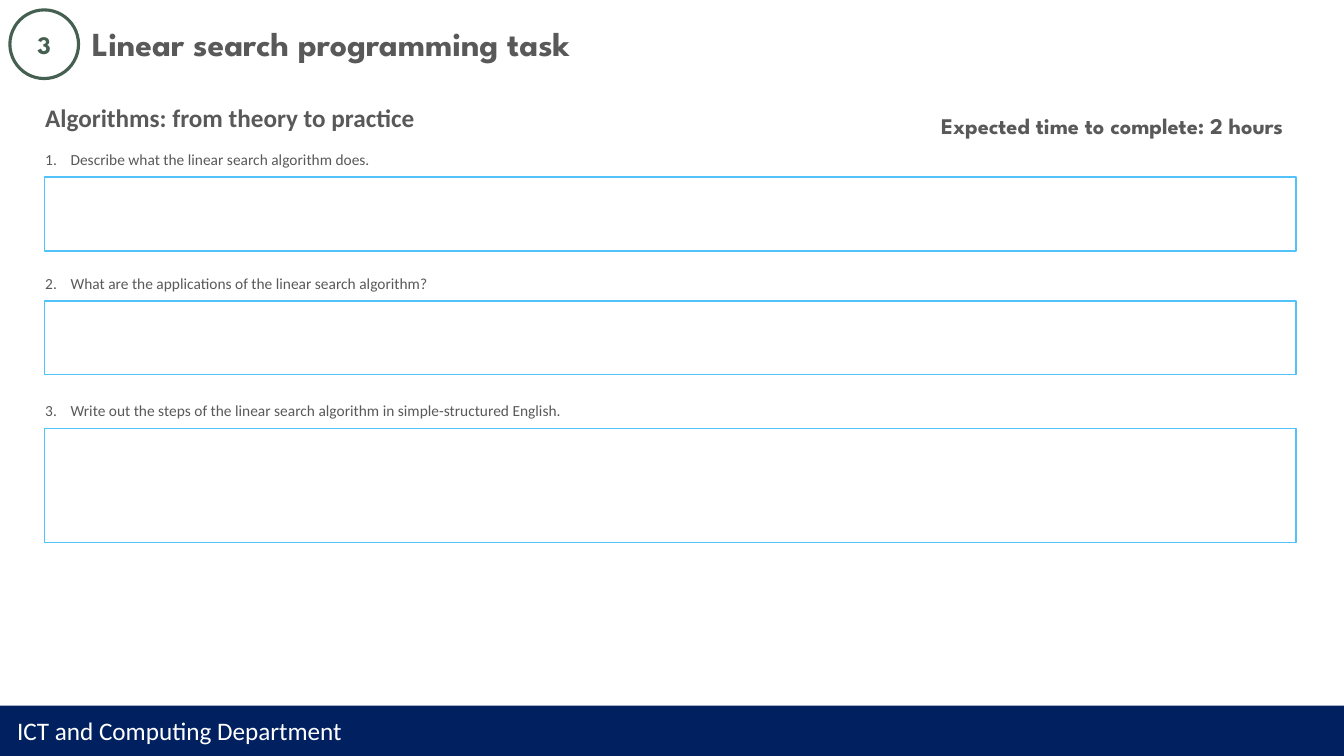
from pptx import Presentation
from pptx.dml.color import RGBColor
from pptx.enum.shapes import MSO_SHAPE
from pptx.enum.text import MSO_ANCHOR, MSO_AUTO_SIZE, PP_ALIGN
from pptx.util import Cm, Pt
from lxml.etree import SubElement
from pptx.oxml.ns import qn

GREY = RGBColor(0x59, 0x59, 0x59)
GREEN = RGBColor(0x45, 0x5F, 0x51)
NAVY = RGBColor(0x00, 0x20, 0x60)
SKY = RGBColor(0x51, 0xC3, 0xF9)
WHITE = RGBColor(0xFF, 0xFF, 0xFF)
WIDE, HIGH = 33.87, 19.05
EDGE = 1.12
INDENT = Cm(0.64)
HEAD = "League Spartan"
BODY = "Calibri"


class Sheet:
    def __init__(self, deck):
        self.slide = deck.slides.add_slide(deck.slide_layouts[5])
        self.style = {"name": BODY, "size": 18, "bold": False, "color": GREY}

    def place(self, item, area):
        for key, value in zip(("left", "top", "width", "height"), area):
            setattr(item, key, Cm(value))

    def letter(self, item, text, look, anchor=MSO_ANCHOR.TOP, wrap=True,
               align=PP_ALIGN.LEFT, space=1.0, fit=MSO_AUTO_SIZE.NONE):
        frame = item.text_frame
        layout = {"auto_size": fit, "word_wrap": wrap, "vertical_anchor": anchor}
        for key, value in layout.items():
            setattr(frame, key, value)
        para = frame.paragraphs[0]
        for key, value in {"alignment": align, "line_spacing": space}.items():
            setattr(para, key, value)
        run = para.add_run()
        run.text = text
        style = {**self.style, **look}
        run.font.color.rgb = style.pop("color")
        style["size"] = Pt(style["size"])
        for key, value in style.items():
            setattr(run.font, key, value)
        return para

    def title(self, text, area, look, **form):
        item = self.slide.shapes.title
        self.place(item, area)
        self.letter(item, text, look, **form)

    def label(self, text, area, look, **form):
        item = self.slide.shapes.add_textbox(*map(Cm, area))
        return self.letter(item, text, look, **form)

    def shape(self, kind, area, fill=None, line=None, width=1.25):
        item = self.slide.shapes.add_shape(kind, *map(Cm, area))
        item.shadow.inherit = False
        for part, color in ((item.fill, fill), (item.line.fill, line)):
            if color is None:
                part.background()
            else:
                part.solid()
                part.fore_color.rgb = color
        if line is not None:
            item.line.width = Pt(width)
        return item

    def task(self, number, text, top, height):
        self.shape(MSO_SHAPE.RECTANGLE, (EDGE, top, 31.55, height), line=SKY)
        para = self.label(text, (0.89, top - 0.81, 16.94, 0.74), {"size": 11},
                          fit=MSO_AUTO_SIZE.SHAPE_TO_FIT_TEXT)
        props = para._p.get_or_add_pPr()
        for key, value in {"marL": INDENT, "indent": -INDENT}.items():
            props.set(key, str(int(value)))
        SubElement(props, qn("a:buFont"), typeface="+mj-lt")
        SubElement(props, qn("a:buAutoNum"), type="arabicPeriod",
                   startAt=str(number))


def main():
    deck = Presentation()
    deck.slide_width, deck.slide_height = Cm(WIDE), Cm(HIGH)
    sheet = Sheet(deck)
    middle = MSO_ANCHOR.MIDDLE
    bold = {"bold": True}
    head = {"name": HEAD, "bold": True}

    sheet.shape(MSO_SHAPE.RECTANGLE, (0, 17.78, WIDE, 1.27), fill=NAVY)
    sheet.label("ICT and Computing Department", (0.18, 17.91, 8.81, 1.02),
                {"color": WHITE}, wrap=False,
                fit=MSO_AUTO_SIZE.SHAPE_TO_FIT_TEXT)
    sheet.label("Expected time to complete: 2 hours", (23.47, 2.77, 10.39, 1.02),
                {**head, "size": 16}, space=0.9)
    badge = sheet.shape(MSO_SHAPE.OVAL, (0.25, 0.25, 1.73, 1.73),
                        line=GREEN, width=2.25)
    sheet.letter(badge, "3", {**head, "color": GREEN}, anchor=middle,
                 align=PP_ALIGN.CENTER)
    sheet.label("Algorithms: from theory to practice", (0.89, 2.51, 21.41, 1.02),
                bold, anchor=middle, space=0.9)
    sheet.title("Linear search programming task", (2.06, 0.23, 26.19, 1.85),
                {**head, "size": 24}, anchor=middle, space=0.9)

    tasks = (
        ("Describe what the linear search algorithm does.", 4.47, 1.85),
        ("What are the applications of the linear search algorithm?", 7.59, 1.85),
        ("Write out the steps of the linear search algorithm in "
         "simple-structured English.", 10.8, 2.87),
    )
    for number, (text, top, height) in enumerate(tasks, 1):
        sheet.task(number, text, top, height)
    deck.save("out.pptx")


if __name__ == "__main__":
    main()
